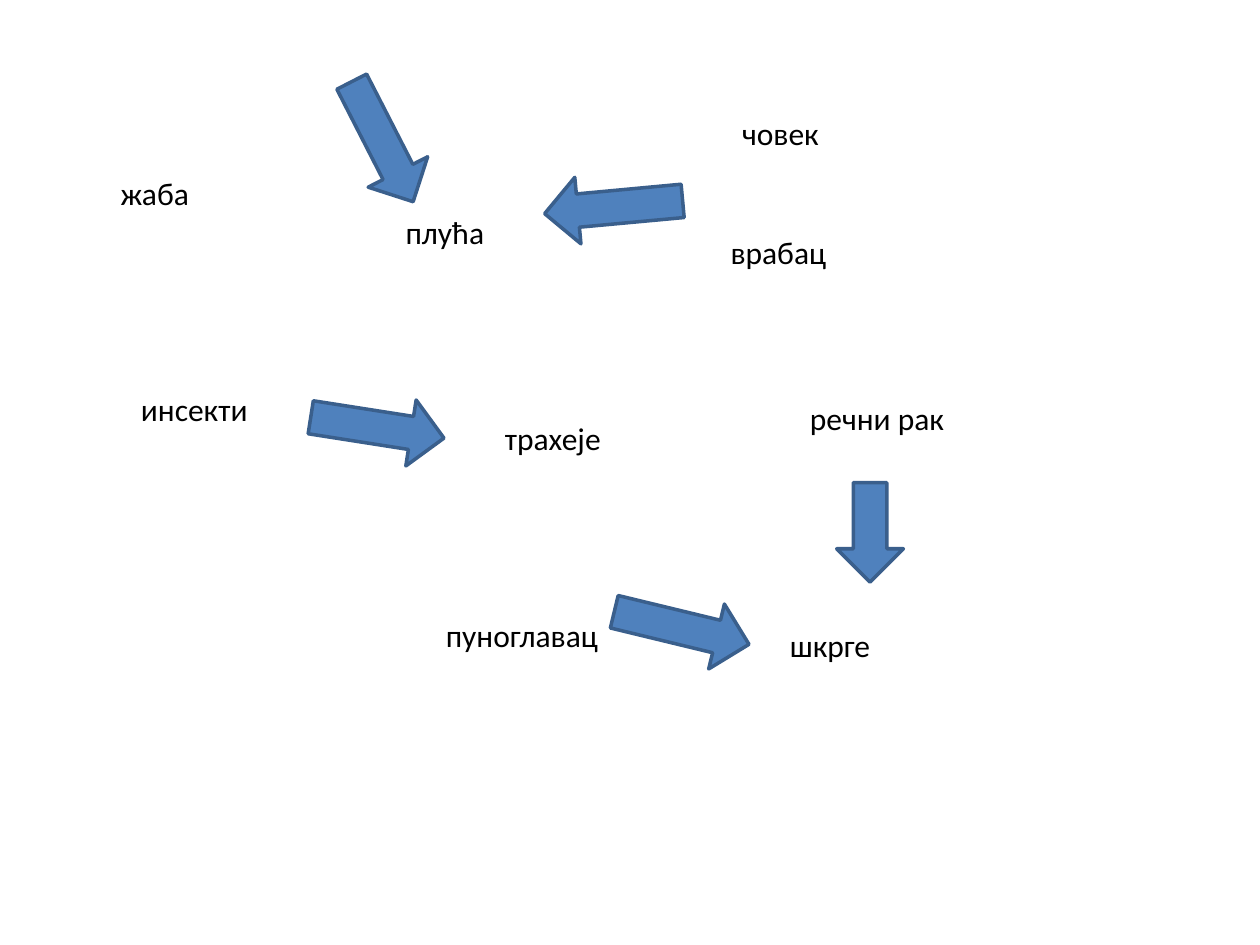
from pptx import Presentation
from pptx.dml.color import RGBColor
from pptx.enum.shapes import MSO_SHAPE
from pptx.enum.text import MSO_AUTO_SIZE
from pptx.util import Inches, Pt

BLACK = RGBColor(0x00, 0x00, 0x00)
BLUE = RGBColor(0x4F, 0x81, 0xBD)
DARK_BLUE = RGBColor(0x3A, 0x5F, 0x8C)

LABEL_HEIGHT = 0.4
ARROW_HEIGHT = 0.53
LABEL_INSET = 0.1
HUMAN_INSET = 0.66

FRAME_FORMAT = {"word_wrap": True, "auto_size": MSO_AUTO_SIZE.SHAPE_TO_FIT_TEXT}
FONT_FORMAT = {"name": "Calibri", "size": Pt(18)}

ANIMALS = [
    ("жаба", 0.86, 1.33, 2.19, LABEL_INSET),
    ("инсекти", 1.02, 3.05, 1.48, LABEL_INSET),
    ("пуноглавац", 3.44, 4.84, 1.72, LABEL_INSET),
    ("врабац", 5.7, 1.8, 1.56, LABEL_INSET),
    ("речни рак", 6.33, 3.12, 1.53, LABEL_INSET),
    ("човек", 5.23, 0.86, 1.41, HUMAN_INSET),
]
BREATHING_ORGANS = [
    ("плућа", 3.12, 1.64, 1.88, LABEL_INSET),
    ("трахеје", 3.91, 3.28, 3.2, LABEL_INSET),
    ("шкрге", 6.17, 4.92, 1.25, LABEL_INSET),
]
ARROWS = [
    (2.5, 0.86, 1.07, 62.9),
    (4.32, 1.38, 1.1, 174.7),
    (6.51, 3.96, 0.79, 90),
    (2.46, 3.13, 1.07, 8.9),
    (4.86, 4.72, 1.1, 13.6),
]


def apply_format(target, values):
    for attribute, value in values.items():
        setattr(target, attribute, value)


def add_label(slide, wording, left, top, width, inset):
    label = slide.shapes.add_textbox(
        Inches(left), Inches(top), Inches(width), Inches(LABEL_HEIGHT)
    )
    frame = label.text_frame
    apply_format(frame, {**FRAME_FORMAT, "margin_left": Inches(inset)})
    run = frame.paragraphs[0].add_run()
    run.text = wording
    apply_format(run.font, FONT_FORMAT)
    run.font.color.rgb = BLACK


def add_arrow(slide, left, top, width, rotation):
    arrow = slide.shapes.add_shape(
        MSO_SHAPE.RIGHT_ARROW,
        Inches(left), Inches(top), Inches(width), Inches(ARROW_HEIGHT),
    )
    arrow.rotation = rotation
    arrow.shadow.inherit = False
    arrow.fill.solid()
    arrow.fill.fore_color.rgb = BLUE
    arrow.line.color.rgb = DARK_BLUE
    arrow.line.width = Pt(2)


def main():
    presentation = Presentation()
    apply_format(
        presentation, {"slide_width": Inches(10), "slide_height": Inches(7.5)}
    )
    slide = presentation.slides.add_slide(presentation.slide_layouts[6])
    for label in ANIMALS + BREATHING_ORGANS:
        add_label(slide, *label)
    for arrow in ARROWS:
        add_arrow(slide, *arrow)
    presentation.save("out.pptx")


if __name__ == "__main__":
    main()
